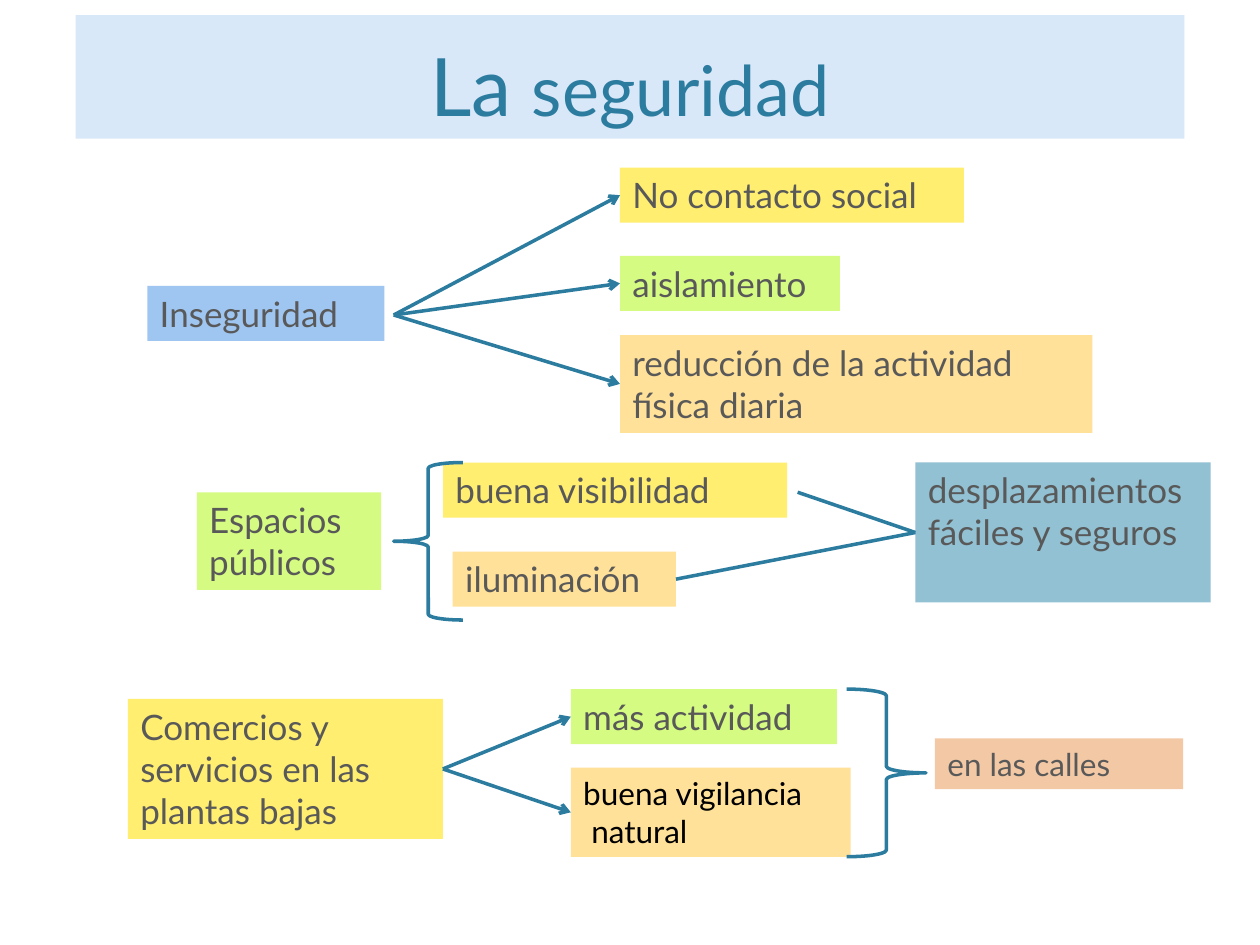
"""Builds the slide on safety in public space: causes, effects and the arrows between them."""
from lxml.etree import SubElement
from pptx import Presentation
from pptx.dml.color import RGBColor
from pptx.enum.shapes import MSO_CONNECTOR, MSO_SHAPE
from pptx.enum.text import MSO_ANCHOR, PP_ALIGN
from pptx.oxml.ns import qn
from pptx.util import Pt

COLOURS = {
    "heading": "D9E8F9", "blue": "9FC6F0", "yellow": "FFEE70", "green": "D5FB82",
    "orange": "FFE199", "teal": "91C1D2", "peach": "F3C8A5",
    "accent": "2C7C9F", "grey": "595959", "black": "000000",
}
FRAME_FORMAT = {"word_wrap": True, "vertical_anchor": MSO_ANCHOR.TOP}
LINE_HEIGHT = {1: 31.5, 2: 55.8, 3: 80}


def rgb(name):
    return RGBColor.from_string(COLOURS[name])


def add_label(place, fill, paragraphs, align=PP_ALIGN.LEFT, **frame_changes):
    label = slide.shapes.add_textbox(*map(Pt, place))
    label.fill.solid()
    label.fill.fore_color.rgb = rgb(fill)
    frame = label.text_frame
    for name, value in {**FRAME_FORMAT, **frame_changes}.items():
        setattr(frame, name, value)
    for index, runs in enumerate(paragraphs):
        paragraph = frame.add_paragraph() if index else frame.paragraphs[0]
        paragraph.alignment = align
        for words, size, colour in runs:
            run = paragraph.add_run()
            run.text = words
            for name, value in {"name": "Lato", "size": Pt(size)}.items():
                setattr(run.font, name, value)
            run.font.color.rgb = rgb(colour)
    return label


presentation = Presentation()
for name, value in {"slide_width": Pt(720), "slide_height": Pt(540)}.items():
    setattr(presentation, name, value)
slide = presentation.slides.add_slide(presentation.slide_layouts[6])

add_label((43.2, 8.6, 633.6, 70.6), "heading",
          [[("La ", 46, "accent"), ("seguridad", 40, "accent")]],
          PP_ALIGN.CENTER, vertical_anchor=MSO_ANCHOR.BOTTOM)

ideas = [
    ("insecurity", 84.2, 163.4, 135.4, LINE_HEIGHT[1], "blue", ["Inseguridad"], 20, "grey"),
    ("contact", 354.3, 95.8, 196.6, LINE_HEIGHT[1], "yellow", ["No contacto social"], 20, "grey"),
    ("reduction", 354.3, 191.5, 270, LINE_HEIGHT[2], "orange",
     ["reducción de la actividad física diaria"], 20, "grey"),
    ("isolation", 354.3, 146.2, 125.6, LINE_HEIGHT[1], "green", ["aislamiento"], 20, "grey"),
    ("spaces", 112.5, 281.3, 105.4, LINE_HEIGHT[2], "green", ["Espacios", "públicos"], 20, "grey"),
    ("visibility", 253.2, 264.3, 196.6, LINE_HEIGHT[1], "yellow",
     ["buena visibilidad"], 20, "grey"),
    ("lighting", 258.7, 315.2, 127.6, LINE_HEIGHT[1], "orange", ["iluminación"], 20, "grey"),
    ("journeys", 523.1, 264.3, 168.7, LINE_HEIGHT[3], "teal",
     ["desplazamientos fáciles y seguros"], 20, "grey"),
    ("shops", 73.1, 399.4, 180, LINE_HEIGHT[3], "yellow",
     ["Comercios y servicios en las plantas bajas"], 20, "grey"),
    ("activity", 326.2, 393.8, 152, LINE_HEIGHT[1], "green", ["más actividad"], 20, "grey"),
    ("vigilance", 326.2, 438.7, 160, 51, "orange", ["buena vigilancia", " natural"], 18, "black"),
    ("streets", 534.3, 421.9, 141.8, 29, "peach", ["en las calles"], 18, "grey"),
]
left_middle, right_middle = {}, {}
for idea, left, top, width, height, fill, lines, size, colour in ideas:
    add_label((left, top, width, height), fill, [[(line, size, colour)] for line in lines])
    left_middle[idea] = (left, top + height / 2)
    right_middle[idea] = (left + width, top + height / 2)

braces = [
    (MSO_SHAPE.LEFT_BRACE, 224.9, 264.3, 39.6, 90),
    (MSO_SHAPE.RIGHT_BRACE, 483.8, 393.8, 45.4, 95.8),
]
for preset, *place in braces:
    brace = slide.shapes.add_shape(preset, *map(Pt, place))
    brace.shadow.inherit = False
    brace.fill.background()
    brace.line.color.rgb = rgb("accent")
    brace.line.width = Pt(2)

insecurity_exit, visibility_exit = (225, 180), (455.8, 281.3)
links = [
    (insecurity_exit, "contact", True),
    (insecurity_exit, "isolation", True),
    (insecurity_exit, "reduction", True),
    (visibility_exit, "journeys", False),
    (right_middle["lighting"], "journeys", False),
    (right_middle["shops"], "activity", True),
    (right_middle["shops"], "vigilance", True),
]
for start, target, has_arrow in links:
    link = slide.shapes.add_connector(
        MSO_CONNECTOR.STRAIGHT, *map(Pt, start + left_middle[target]))
    link.line.color.rgb = rgb("accent")
    link.line.width = Pt(2)
    if has_arrow:
        SubElement(link.line._get_or_add_ln(), qn("a:tailEnd"), type="arrow")
    SubElement(link._element.spPr, qn("a:effectLst"))

presentation.save("out.pptx")
